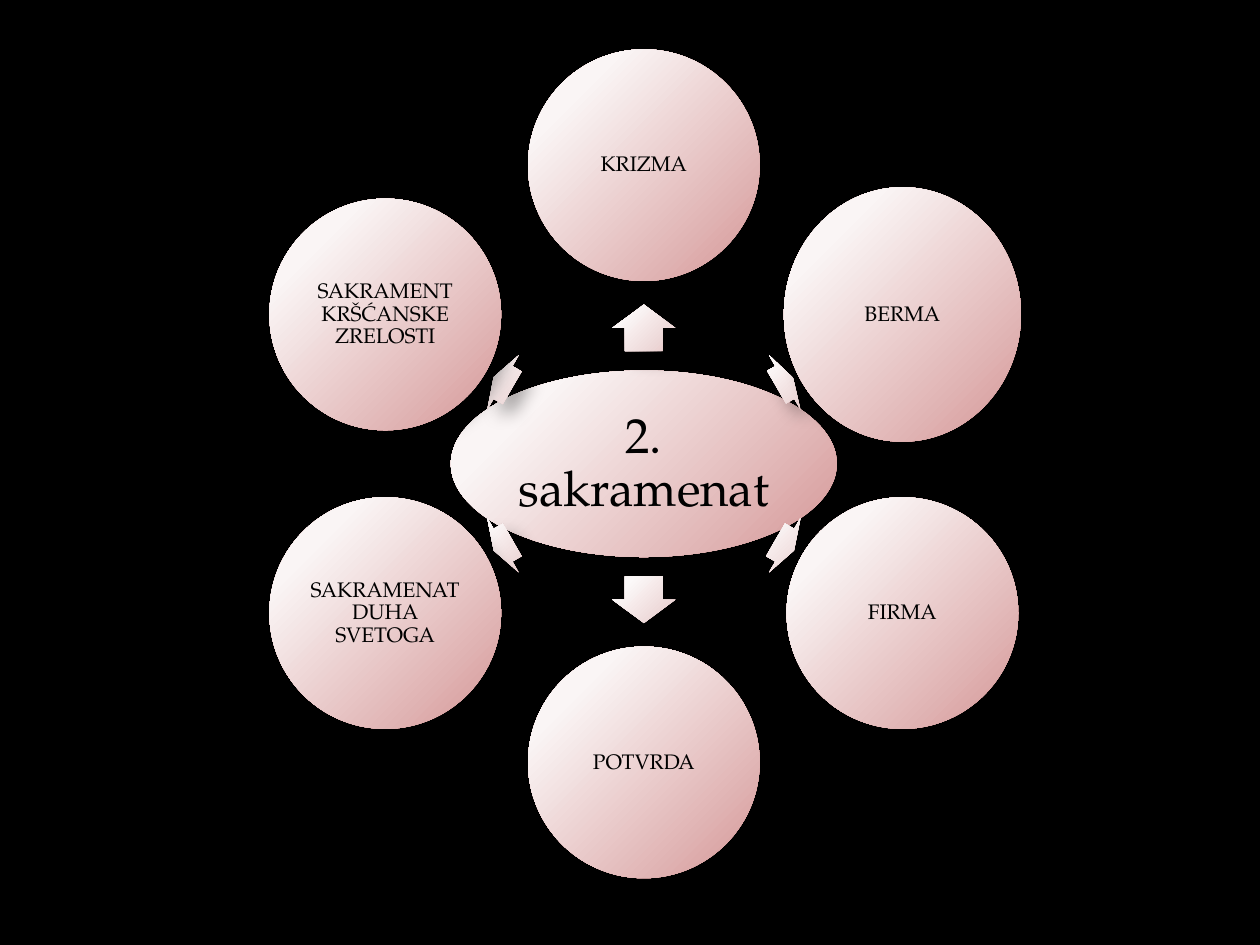
"""Draw a hub with six names of a sacrament around it."""
from dataclasses import dataclass
from math import cos, radians, sin

from lxml import etree
from pptx import Presentation
from pptx import util as u
from pptx.dml.color import RGBColor
from pptx.enum import shapes, text
from pptx.oxml import parse_xml
from pptx.oxml.ns import nsdecls, qn

HUE = {"back": "000000", "ink": "000000", "shade": "000000",
       "pale": "FAF5F5", "rose": "D59797", "mist": "FCF9F9", "blush": "E7C9C9"}
FONT = "TeX Gyre Pagella"
MID_X, MID_Y, RING = 12.98, 9.35, 6.02
KIND = shapes.MSO_SHAPE


@dataclass
class Node:
    label: str
    angle: int
    wide: float = 4.67
    high: float = 4.67
    stem: float = 0.43
    reach: float = 3.28


NODES = [
    Node("KRIZMA", 270, stem=0.94, reach=2.74),
    Node("BERMA", 330, wide=4.78, high=5.13, stem=0.38),
    Node("FIRMA", 30),
    Node("POTVRDA", 90, stem=0.94, reach=2.74),
    Node("SAKRAMENAT DUHA SVETOGA", 150),
    Node("SAKRAMENT KRŠĆANSKE ZRELOSTI", 210),
]


def blend(shape, first: str, last: str) -> None:
    """Give the shape a round gradient and a soft shadow."""
    shape.fill.background()
    shape.line.fill.background()
    shape.shadow.inherit = False
    props = shape._element.spPr
    grad = parse_xml(
        f'<a:gradFill {nsdecls("a")} rotWithShape="1"><a:gsLst>'
        f'<a:gs pos="20000"><a:srgbClr val="{HUE[first]}"/></a:gs>'
        f'<a:gs pos="100000"><a:srgbClr val="{HUE[last]}"/></a:gs></a:gsLst>'
        '<a:path path="circle"><a:fillToRect l="-15000" t="-15000" '
        'r="115000" b="115000"/></a:path></a:gradFill>')
    props.replace(props.find(qn("a:noFill")), grad)
    cast = etree.SubElement(
        props.find(qn("a:effectLst")), qn("a:outerShdw"),
        blurRad=str(u.Pt(10.2)), dist=str(u.Pt(8)), dir="2700000",
        algn="tl", rotWithShape="0")
    tint = etree.SubElement(cast, qn("a:srgbClr"), val=HUE["shade"])
    etree.SubElement(tint, qn("a:alpha"), val="35000")


def place(slide, kind, angle: int, dist: float, wide: float, high: float):
    """Add a shape centred at an angle and distance from the hub."""
    x = MID_X + dist * cos(radians(angle))
    y = MID_Y + dist * sin(radians(angle))
    return slide.shapes.add_shape(
        kind, u.Cm(x - wide / 2), u.Cm(y - high / 2), u.Cm(wide), u.Cm(high))


def write(shape, label: str, size: int, inset: float) -> None:
    """Set centred text in a shape."""
    frame = shape.text_frame
    form = {"word_wrap": True, "vertical_anchor": text.MSO_ANCHOR.MIDDLE}
    form |= {f"margin_{side}": u.Cm(inset)
             for side in ("left", "top", "right", "bottom")}
    para = frame.paragraphs[0]
    run = para.add_run()
    run.text = label
    jobs = [(frame, form),
            (para, {"alignment": text.PP_ALIGN.CENTER, "line_spacing": 0.9}),
            (run.font, {"name": FONT, "size": u.Pt(size)})]
    for item, values in jobs:
        for name, value in values.items():
            setattr(item, name, value)
    run.font.color.rgb = RGBColor.from_string(HUE["ink"])


def draw(slide, node: Node) -> None:
    """Draw an outer circle and the arrow that leads to it."""
    arrow = place(slide, KIND.RIGHT_ARROW, node.angle, node.reach, node.stem, 1.27)
    arrow.rotation = node.angle
    arrow.adjustments[0], arrow.adjustments[1] = 0.6, 0.5
    blend(arrow, "mist", "blush")
    disc = place(slide, KIND.OVAL, node.angle, RING, node.wide, node.high)
    blend(disc, "pale", "rose")
    write(disc, node.label, 12, 0.05)


def main() -> None:
    """Build and save the slide."""
    deck = Presentation()
    deck.slide_width, deck.slide_height = u.Cm(25.4), u.Cm(19.05)
    slide = deck.slides.add_slide(deck.slide_layouts[6])
    back = slide.background.fill
    back.solid()
    back.fore_color.rgb = RGBColor.from_string(HUE["back"])
    hub = place(slide, KIND.OVAL, 0, 0, 7.78, 3.76)
    blend(hub, "pale", "rose")
    write(hub, "2. sakramenat", 28, 0.1)
    for node in NODES:
        draw(slide, node)
    deck.save("out.pptx")


if __name__ == "__main__":
    main()
